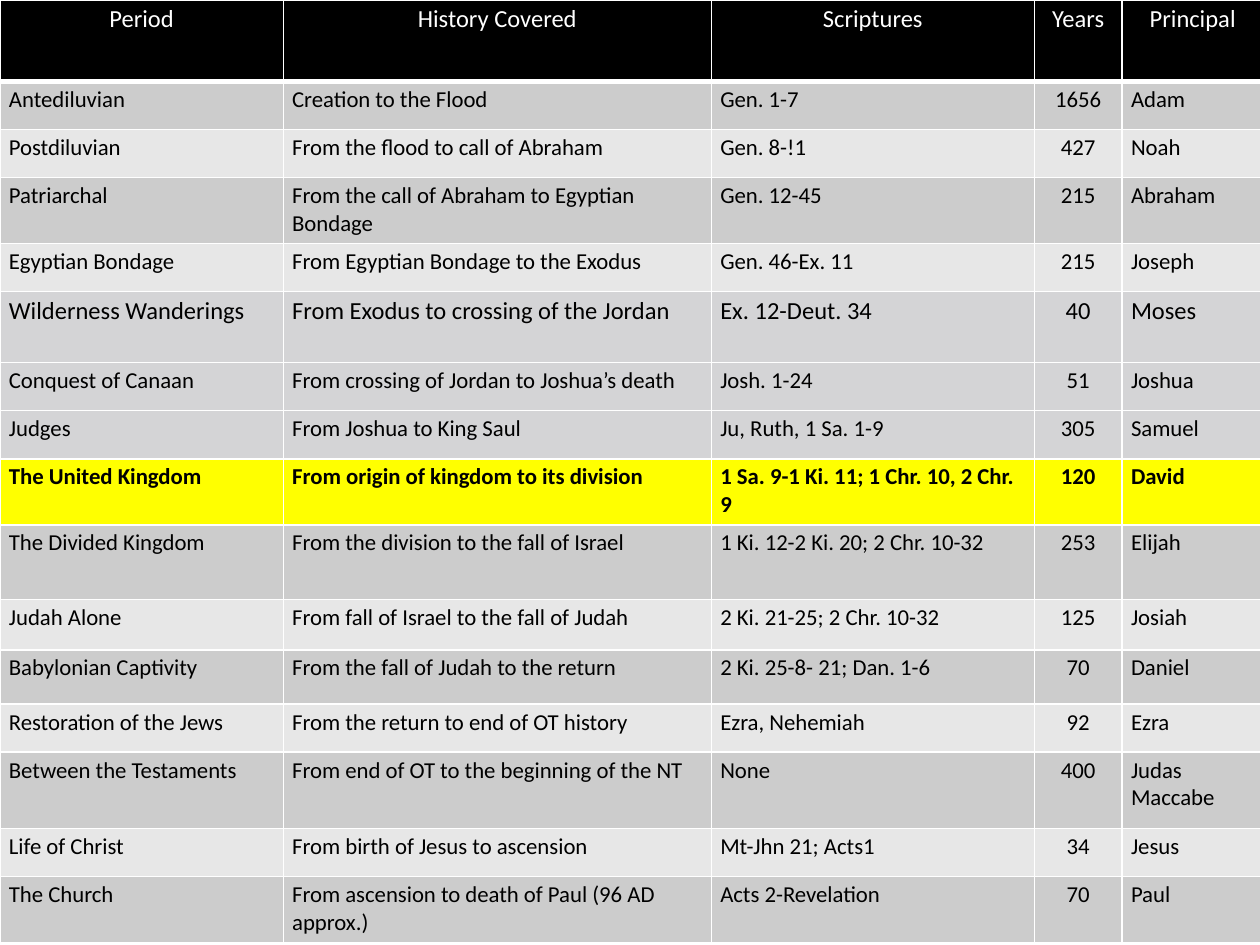
from pptx import Presentation
from pptx.dml.color import RGBColor
from pptx.enum.text import PP_ALIGN
from pptx.oxml import parse_xml
from pptx.oxml.ns import nsdecls
from pptx.util import Cm, Pt

HEADINGS = ("Period", "History Covered", "Scriptures", "Years", "Principal ")
PERIODS = [
    ("Antediluvian", "Creation to the Flood", "Gen. 1-7", "1656", "Adam"),
    ("Postdiluvian", "From the flood to call of Abraham", "Gen. 8-!1", "427", "Noah"),
    ("Patriarchal", "From the call of Abraham to Egyptian Bondage", "Gen. 12-45", "215", "Abraham"),
    ("Egyptian Bondage", "From Egyptian Bondage to the Exodus", "Gen. 46-Ex. 11", "215", "Joseph"),
    ("Wilderness Wanderings", "From Exodus to crossing of the Jordan", "Ex. 12-Deut. 34", "40", "Moses"),
    ("Conquest of Canaan", "From crossing of Jordan to Joshua’s death", "Josh. 1-24", "51", "Joshua"),
    ("Judges", "From Joshua to King Saul", "Ju, Ruth, 1 Sa. 1-9", "305", "Samuel"),
    ("The United Kingdom", "From origin of kingdom to its division",
     "1 Sa. 9-1 Ki. 11; 1 Chr. 10, 2 Chr. 9", "120", "David"),
    ("The Divided Kingdom", "From the division to the fall of Israel",
     "1 Ki. 12-2 Ki. 20; 2 Chr. 10-32", "253", "Elijah"),
    ("Judah Alone", "From fall of Israel to the fall of Judah", "2 Ki. 21-25; 2 Chr. 10-32", "125", "Josiah"),
    ("Babylonian Captivity", "From the fall of Judah to the return", "2 Ki. 25-8- 21; Dan. 1-6", "70", "Daniel"),
    ("Restoration of the Jews", "From the return to end of OT history", "Ezra, Nehemiah", "92", "Ezra"),
    ("Between the Testaments", "From end of OT to the beginning of the NT", "None", "400", "Judas Maccabe"),
    ("Life of Christ", "From birth of Jesus to ascension", "Mt-Jhn 21; Acts1", "34", "Jesus"),
    ("The Church", "From ascension to death of Paul (96 AD approx.)", "Acts 2-Revelation", "70", "Paul"),
]
WIDTHS = (5.71, 8.63, 6.51, 1.77, 2.96)
HEIGHTS = (1.64, 0.97, 0.97, 1.33, 0.97, 1.43, 0.97, 0.97, 1.33, 1.51, 1.01, 1.09, 0.97, 1.54, 0.97, 1.33)
YEARS_COLUMN = HEADINGS.index("Years")
BODY = {"size": 13, "bold": False, "color": "000000"}
HEADER = {"size": 14, "bold": False, "color": "FFFFFF", "fill": "000000"}
BANDS = ("E7E7E7", "CCCCCC")
SPECIAL = {
    "Wilderness Wanderings": {"fill": "D4D4D6", "size": 14},
    "Conquest of Canaan": {"fill": "D4D4D6"},
    "Judges": {"fill": "D4D4D6"},
    "The United Kingdom": {"fill": "FFFF00", "bold": True},
}


def paint(target, color):
    """Give a fill or a font color a solid hex color."""
    if hasattr(target, "solid"):
        target.solid()
        target = target.fore_color
    target.rgb = RGBColor.from_string(color)


def assign(target, values):
    """Set every attribute named in a dict."""
    for name, value in values.items():
        setattr(target, name, value)


class TimelinePage:
    """Holds the table style and the current slide."""

    font = "Calibri"
    rule = "FFFFFF"
    margins = {"margin_left": Cm(0.18), "margin_right": Cm(0.18), "margin_top": Cm(0.09), "margin_bottom": Cm(0.09)}
    plain = {"first_row": True, "horz_banding": False}

    def __init__(self, deck):
        """Add a blank slide to the deck."""
        self.page = deck.slides.add_slide(deck.slide_layouts[6])

    def table(self, rows, widths, heights):
        """Add a table at the top left corner and fill its cells."""
        frame = self.page.shapes.add_table(
            len(rows), len(widths), 0, 0, Cm(sum(widths)), Cm(sum(heights)))
        grid = frame.table
        assign(grid, self.plain)
        for column, width in zip(grid.columns, widths):
            column.width = Cm(width)
        for index, (values, height) in enumerate(zip(rows, heights)):
            grid.rows[index].height = Cm(height)
            if index == 0:
                style = HEADER
            else:
                style = {**BODY, "fill": BANDS[index % 2], **SPECIAL.get(values[0], {})}
            for place, text in enumerate(values):
                centered = index == 0 or place == YEARS_COLUMN
                self.cell(grid.cell(index, place), text, style, centered)
                self.borders(grid.cell(index, place), 3 if index == 0 else 1)
                paint(grid.cell(index, place).fill, style["fill"])

    def cell(self, box, text, style, centered):
        """Write one cell with its margins, alignment and font."""
        assign(box, self.margins)
        para = box.text_frame.paragraphs[0]
        para.alignment = PP_ALIGN.CENTER if centered else PP_ALIGN.LEFT
        span = para.add_run()
        span.text = text
        assign(span.font, {"name": self.font, "size": Pt(style["size"]), "bold": style["bold"]})
        paint(span.font.color, style["color"])

    def borders(self, box, bottom):
        """Rule the four sides of a cell, with widths in points."""
        properties = box._tc.get_or_add_tcPr()
        for side, width in (("L", 1), ("R", 1), ("T", 1), ("B", bottom)):
            properties.append(parse_xml(
                f'<a:ln{side} {nsdecls("a")} w="{Pt(width)}"><a:solidFill>'
                f'<a:srgbClr val="{self.rule}"/></a:solidFill></a:ln{side}>'))


def main():
    """Build and save the deck."""
    deck = Presentation()
    assign(deck, {"slide_width": Cm(25.4), "slide_height": Cm(19.05)})
    TimelinePage(deck).table([HEADINGS, *PERIODS], WIDTHS, HEIGHTS)
    deck.save("out.pptx")


if __name__ == "__main__":
    main()
